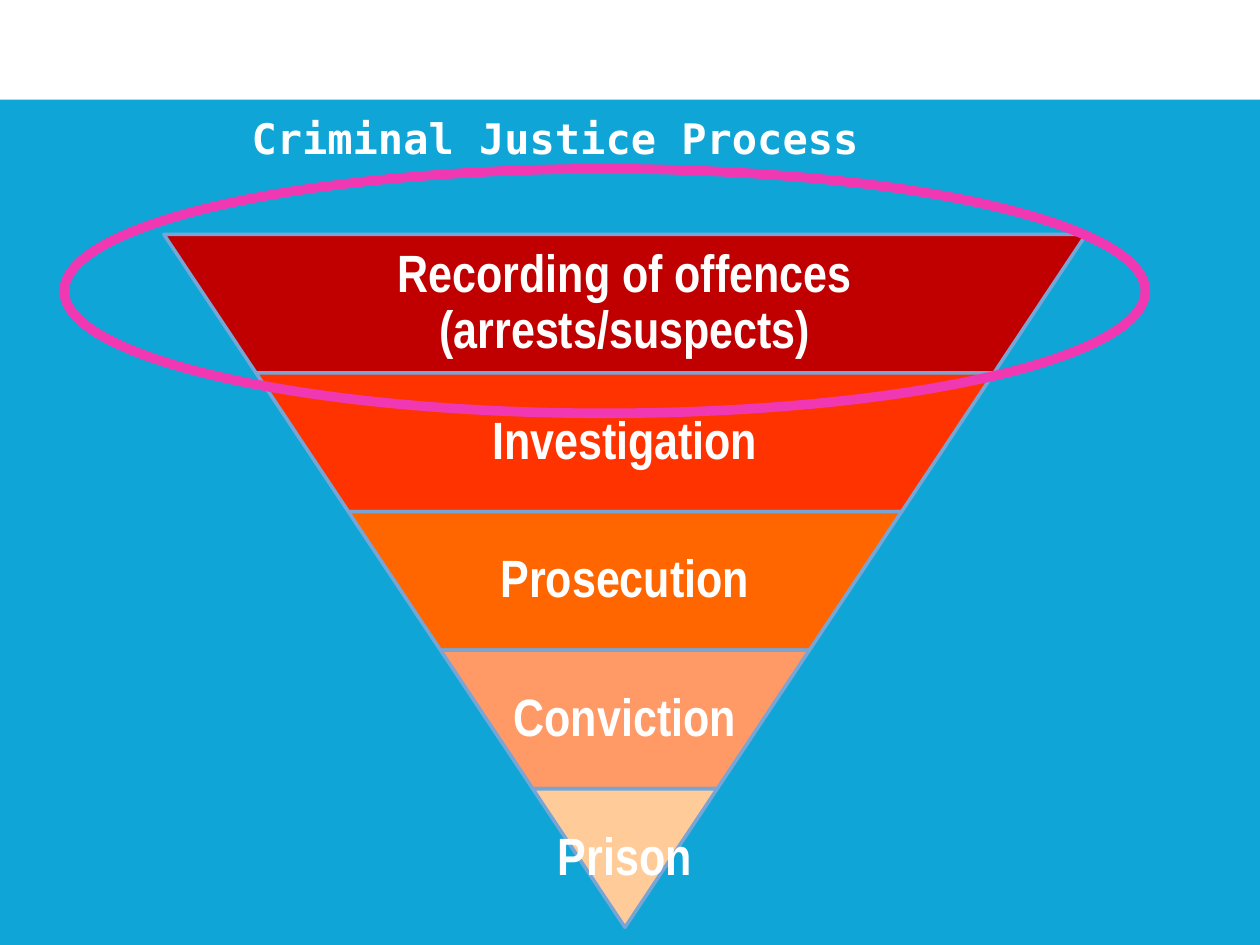
from dataclasses import dataclass

from pptx import Presentation
from pptx.dml.color import RGBColor
from pptx.enum.shapes import MSO_SHAPE
from pptx.enum.text import MSO_ANCHOR, PP_ALIGN
from pptx.util import Inches, Pt


@dataclass(frozen=True)
class Theme:
    background: str = "0FA6D7"
    white: str = "FFFFFF"
    tier_edge: str = "77A5D5"
    highlight: str = "F038B3"
    tier_font: str = "Arial Narrow"
    title_font: str = "DejaVu Sans Mono"
    tier_size: int = 30
    title_size: int = 24
    edge_width: float = 2
    highlight_width: float = 5.5


THEME = Theme()

STAGES = [
    ("Recording of offences (arrests/suspects)", "C00000"),
    ("Investigation", "FF3300"),
    ("Prosecution", "FF6600"),
    ("Conviction", "FF9966"),
    ("Prison", "FFCC99"),
]

# Funnel grid, in inches
FUNNEL_CENTER = 4.96
FUNNEL_TOP = 1.86
FUNNEL_WIDTH = 7.32
TIER_HEIGHT = 1.1
TIER_STEP = FUNNEL_WIDTH / len(STAGES)
TEXT_SHARE = 0.65


def color(code):
    return RGBColor.from_string(code)


def add_shape(slide, kind, place, fill=None, line=None, line_width=0):
    shape = slide.shapes.add_shape(kind, *map(Inches, place))
    shape.shadow.inherit = False
    if fill:
        shape.fill.solid()
        shape.fill.fore_color.rgb = color(fill)
    else:
        shape.fill.background()
    if line:
        shape.line.color.rgb = color(line)
        shape.line.width = Pt(line_width)
    else:
        shape.line.fill.background()
    return shape


def add_text(slide, text, place, font_name, size):
    box = slide.shapes.add_textbox(*map(Inches, place))
    frame = box.text_frame
    frame.word_wrap = True
    frame.text = text
    para = frame.paragraphs[0]
    para.alignment = PP_ALIGN.CENTER
    font = para.runs[0].font
    font.name, font.size, font.bold = font_name, Pt(size), True
    font.color.rgb = color(THEME.white)
    return frame


def add_tier(slide, index, label, fill):
    top = FUNNEL_TOP + index * TIER_HEIGHT
    width = FUNNEL_WIDTH - index * TIER_STEP
    tier = add_shape(slide, MSO_SHAPE.TRAPEZOID,
                     (FUNNEL_CENTER - width / 2, top, width, TIER_HEIGHT),
                     fill, THEME.tier_edge, THEME.edge_width)
    tier.rotation = 180
    tier.adjustments[0] = TIER_STEP / 2 / TIER_HEIGHT

    # The label is upright, so it sits in its own box
    text_width = max(width * TEXT_SHARE, TIER_STEP)
    frame = add_text(slide, label,
                     (FUNNEL_CENTER - text_width / 2, top, text_width, TIER_HEIGHT),
                     THEME.tier_font, THEME.tier_size)
    frame.vertical_anchor = MSO_ANCHOR.MIDDLE
    frame.margin_left = frame.margin_right = Inches(0.04)
    frame.margin_top = frame.margin_bottom = Inches(0.04)
    frame.paragraphs[0].line_spacing = 0.9


def main():
    deck = Presentation()
    deck.slide_width, deck.slide_height = Inches(10), Inches(7.5)
    slide = deck.slides.add_slide(deck.slide_layouts[6])
    slide.background.fill.solid()
    slide.background.fill.fore_color.rgb = color(THEME.background)

    # White header band
    add_shape(slide, MSO_SHAPE.RECTANGLE, (0, 0, 10, 0.79), THEME.white)

    # Funnel
    for index, (label, fill) in enumerate(STAGES):
        add_tier(slide, index, label, fill)

    # Title
    add_text(slide, "Criminal Justice Process", (0.35, 0.84, 8.11, 0.5),
             THEME.title_font, THEME.title_size)

    # Ring around the first stage
    add_shape(slide, MSO_SHAPE.OVAL, (0.51, 1.34, 8.58, 1.94),
              line=THEME.highlight, line_width=THEME.highlight_width)

    deck.save("out.pptx")


if __name__ == "__main__":
    main()
